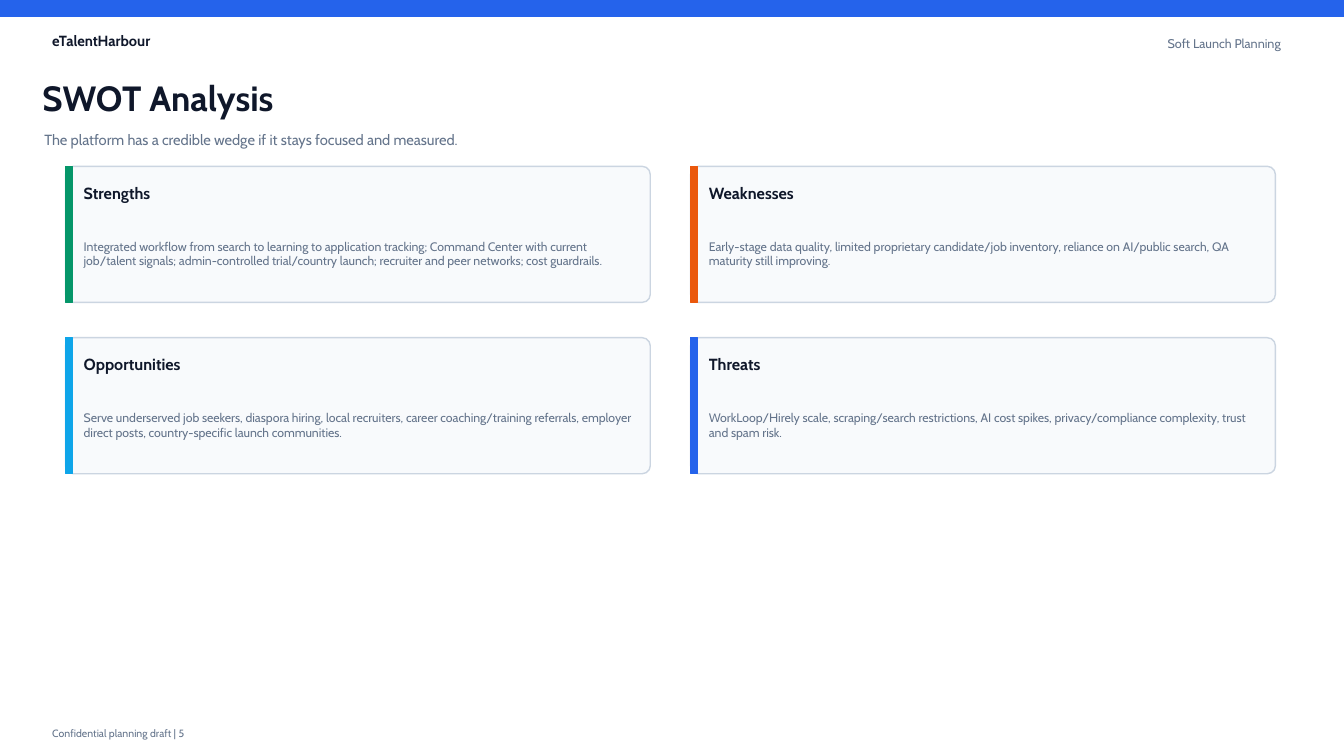
from dataclasses import dataclass

from pptx import Presentation
from pptx.dml.color import RGBColor
from pptx.enum import shapes, text
from pptx.slide import Slide
from pptx.util import Inches, Pt

FONT = "Cabin"
COLORS = {
    "blue": "2563EB",
    "green": "059669",
    "orange": "EA580C",
    "sky": "0EA5E9",
    "ink": "0F172A",
    "muted": "64748B",
    "card": "F8FAFC",
    "border": "CBD5E1",
}
CARD_W, CARD_H = 5.8, 1.35
CARD_LEFT, CARD_TOP = 0.65, 1.65
STEP_X, STEP_Y = 6.2, 1.7


@dataclass
class Card:
    title: str
    body: str
    accent: str


CARDS = [
    Card("Strengths",
         "Integrated workflow from search to learning to application tracking; "
         "Command Center with current job/talent signals; admin-controlled "
         "trial/country launch; recruiter and peer networks; cost guardrails.",
         "green"),
    Card("Weaknesses",
         "Early-stage data quality, limited proprietary candidate/job inventory, "
         "reliance on AI/public search, QA maturity still improving.",
         "orange"),
    Card("Opportunities",
         "Serve underserved job seekers, diaspora hiring, local recruiters, career "
         "coaching/training referrals, employer direct posts, country-specific "
         "launch communities.",
         "sky"),
    Card("Threats",
         "WorkLoop/Hirely scale, scraping/search restrictions, AI cost spikes, "
         "privacy/compliance complexity, trust and spam risk.",
         "blue"),
]


def rgb(name: str) -> RGBColor:
    return RGBColor.from_string(COLORS[name])


def add_box(s: Slide, x: float, y: float, w: float, h: float,
            fill: str, line: str, radius: float = 0) -> None:
    kind = shapes.MSO_SHAPE.ROUNDED_RECTANGLE if radius else shapes.MSO_SHAPE.RECTANGLE
    sp = s.shapes.add_shape(kind, Inches(x), Inches(y), Inches(w), Inches(h))
    if radius:
        sp.adjustments[0] = radius / min(w, h)
    sp.shadow.inherit = False
    sp.fill.solid()
    sp.fill.fore_color.rgb = rgb(fill)
    sp.line.color.rgb = rgb(line)
    sp.line.width = Pt(1)


def add_text(s: Slide, content: str, x: float, y: float, w: float, h: float, *,
             size: float, color: str = "muted", bold: bool = False,
             right: bool = False, inset: bool = False) -> None:
    tf = s.shapes.add_textbox(Inches(x), Inches(y), Inches(w), Inches(h)).text_frame
    tf.word_wrap = True
    tf.vertical_anchor = text.MSO_ANCHOR.MIDDLE
    if not inset:
        tf.margin_left = tf.margin_right = tf.margin_top = tf.margin_bottom = 0
    p = tf.paragraphs[0]
    p.alignment = text.PP_ALIGN.RIGHT if right else text.PP_ALIGN.LEFT
    r = p.add_run()
    r.text = content
    r.font.name = FONT
    r.font.size = Pt(size)
    r.font.bold = bold
    r.font.color.rgb = rgb(color)


def add_card(s: Slide, card: Card, x: float, y: float) -> None:
    add_box(s, x, y, CARD_W, CARD_H, "card", "border", radius=0.08)
    add_box(s, x, y, 0.07, CARD_H, card.accent, card.accent)
    add_text(s, card.title, x + 0.18, y + 0.14, 5.5, 0.25,
             size=11.5, color="ink", bold=True)
    add_text(s, card.body, x + 0.18, y + 0.48, 5.52, 0.77, size=8.8)


def main() -> None:
    prs = Presentation()
    prs.slide_width, prs.slide_height = Inches(13.33), Inches(7.5)
    s = prs.slides.add_slide(prs.slide_layouts[6])

    add_box(s, 0, 0, 13.33, 0.16, "blue", "blue")
    add_text(s, "eTalentHarbour", 0.42, 0.28, 2.3, 0.25,
             size=10.5, color="ink", bold=True, inset=True)
    add_text(s, "SWOT Analysis", 0.42, 0.72, 8.7, 0.5, size=25, color="ink", bold=True)
    add_text(s, "The platform has a credible wedge if it stays focused and measured.",
             0.44, 1.22, 9.5, 0.34, size=10.5)
    add_text(s, "Soft Launch Planning", 10.35, 0.3, 2.45, 0.26,
             size=9, right=True, inset=True)

    for i, card in enumerate(CARDS):
        row, col = divmod(i, 2)
        add_card(s, card, CARD_LEFT + col * STEP_X, CARD_TOP + row * STEP_Y)

    add_text(s, "Confidential planning draft | 5", 0.42, 7.18, 4.6, 0.2,
             size=7.5, inset=True)
    prs.save("out.pptx")


if __name__ == "__main__":
    main()
